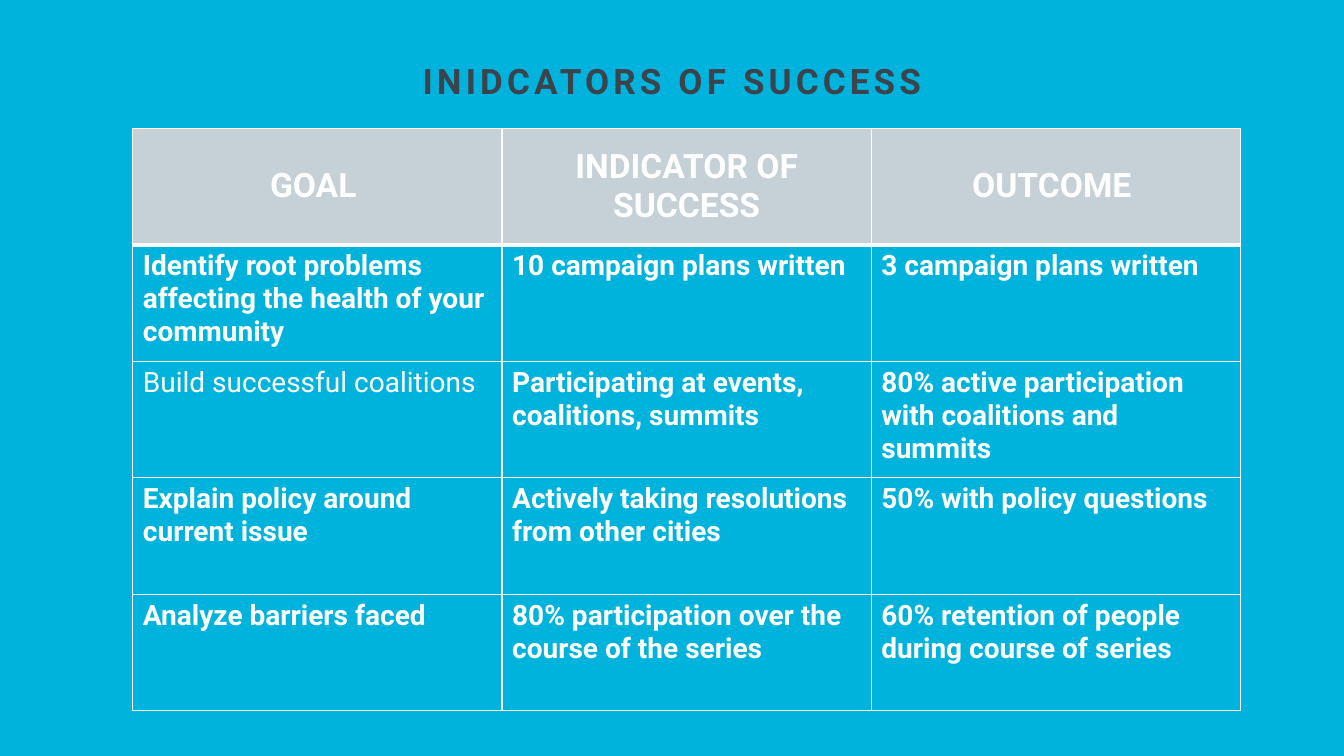
from lxml import etree
from pptx import Presentation
from pptx.dml.color import RGBColor
from pptx.enum import shapes, text
from pptx.oxml import ns
from pptx.util import Pt

SKY = RGBColor(0x00, 0xB3, 0xDC)
SLATE = RGBColor(0x3B, 0x44, 0x4D)
MIST = RGBColor(0xC6, 0xD0, 0xD7)
WHITE = RGBColor(0xFF, 0xFF, 0xFF)
FONT = "Roboto"
WIDTH, HEIGHT = Pt(960), Pt(540)
COL, ROW = Pt(263.76), Pt(83.23)

GOALS = [
    ("GOAL ", "INDICATOR OF SUCCESS", "OUTCOME "),
    ("Identify root problems affecting the health of your community",
     "10 campaign plans written",
     "3 campaign plans written"),
    ("Build successful coalitions",
     "Participating at events, coalitions, summits",
     "80% active participation with coalitions and summits"),
    ("Explain policy around current issue",
     "Actively taking resolutions from other cities",
     "50% with policy questions"),
    ("Analyze barriers faced",
     "80% participation over the course of the series",
     "60% retention of people during course of series"),
]
PLAIN = (2, 0)  # row and column of the one cell that is not bold


def style(run, size, color, bold=True):
    font = run.font
    font.name, font.size, font.bold = FONT, Pt(size), bold
    font.color.rgb = color


def add_back(slide):
    back = slide.shapes.add_shape(
        shapes.MSO_SHAPE.RECTANGLE, 0, 0, WIDTH, HEIGHT)
    back.shadow.inherit = False
    back.fill.solid()
    back.fill.fore_color.rgb = SKY
    back.line.fill.background()


def add_title(slide, words):
    frame = slide.shapes.add_textbox(0, Pt(42.5), WIDTH, Pt(39)).text_frame
    frame.word_wrap = True
    para = frame.paragraphs[0]
    para.text = words
    para.alignment = text.PP_ALIGN.CENTER
    para.line_spacing = 0.9
    run = para.runs[0]
    style(run, 25, SLATE)
    run.font._element.set("spc", "300")


def add_edge(cell, side, width):
    """Draw one cell border; side is L, R, T or B."""
    props = cell._tc.get_or_add_tcPr()
    line = etree.SubElement(props, ns.qn("a:ln" + side), w=str(Pt(width)))
    fill = etree.SubElement(line, ns.qn("a:solidFill"))
    etree.SubElement(fill, ns.qn("a:srgbClr"), val=str(WHITE))


def fill_cell(cell, words, row, bold):
    head = row == 0
    for side in "LRTB":
        thick = (head and side == "B") or (row == 1 and side == "T")
        add_edge(cell, side, 3 if thick else 1)
    if head:
        cell.fill.solid()
        cell.fill.fore_color.rgb = MIST
        cell.vertical_anchor = text.MSO_ANCHOR.MIDDLE
    else:
        cell.fill.background()
    cell.text_frame.text = words
    para = cell.text_frame.paragraphs[0]
    para.alignment = text.PP_ALIGN.CENTER if head else text.PP_ALIGN.LEFT
    style(para.runs[0], 24 if head else 20, WHITE, bold)


def add_grid(slide, data):
    rows, cols = len(data), len(data[0])
    table = slide.shapes.add_table(
        rows, cols, Pt(94.9), Pt(91.6), COL * cols, ROW * rows).table
    table.first_row = table.horz_banding = False
    for col in table.columns:
        col.width = COL
    for r, line in enumerate(data):
        table.rows[r].height = ROW
        for c, words in enumerate(line):
            fill_cell(table.cell(r, c), words, r, (r, c) != PLAIN)


def main():
    deck = Presentation()
    deck.slide_width, deck.slide_height = WIDTH, HEIGHT
    slide = deck.slides.add_slide(deck.slide_layouts[6])
    add_back(slide)
    add_title(slide, "INIDCATORS OF SUCCESS")
    add_grid(slide, GOALS)
    deck.save("out.pptx")


if __name__ == "__main__":
    main()
